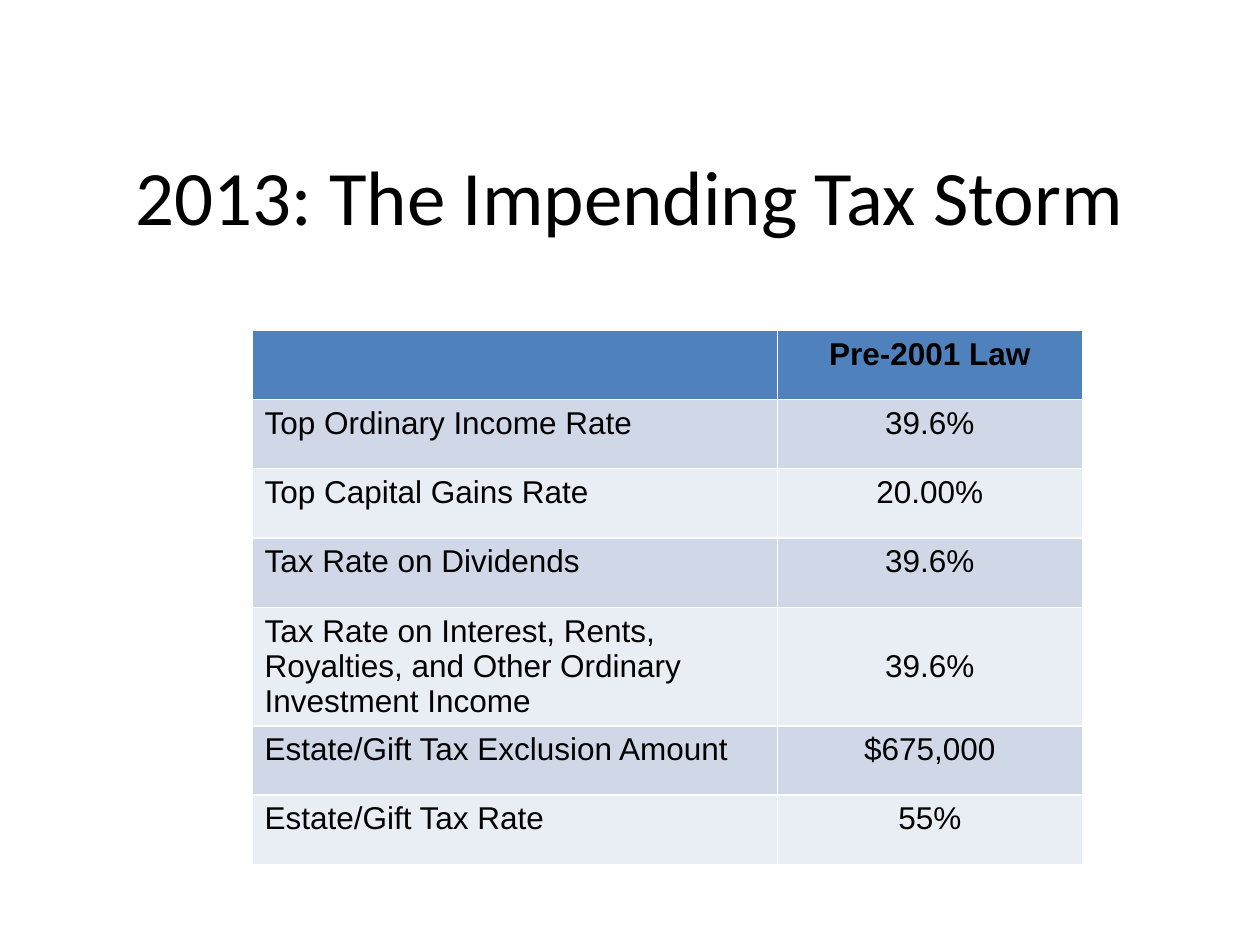
from pptx import Presentation
from pptx.dml.color import RGBColor
from pptx.enum import text
from pptx.util import Inches, Pt

BLACK = RGBColor(0x00, 0x00, 0x00)
HEADER = RGBColor(0x4F, 0x81, 0xBD)
BANDS = (RGBColor(0xD0, 0xD8, 0xE8), RGBColor(0xE9, 0xED, 0xF4))

ROWS = [
    ("", "Pre-2001 Law"),
    ("Top Ordinary Income Rate", "39.6%"),
    ("Top Capital Gains Rate", "20.00%"),
    ("Tax Rate on Dividends", "39.6%"),
    ("Tax Rate on Interest, Rents, Royalties, and Other Ordinary "
     "Investment Income", "39.6%"),
    ("Estate/Gift Tax Exclusion Amount", "$675,000"),
    ("Estate/Gift Tax Rate", "55%"),
]
COLUMN_WIDTHS = (4.17, 2.42)
ROW_HEIGHT = 0.55
TALL_ROW = 4


def format_font(font, **values):
    for name, value in values.items():
        setattr(font, name, value)
    font.color.rgb = BLACK


def add_title(s, title):
    sp = s.shapes.title
    place = dict(left=0.5, top=0.92, width=9, height=1.25)
    for name, value in place.items():
        setattr(sp, name, Inches(value))
    tf = sp.text_frame
    tf.text = title
    tf.vertical_anchor = text.MSO_ANCHOR.MIDDLE
    p = tf.paragraphs[0]
    p.alignment = text.PP_ALIGN.CENTER
    format_font(p.runs[0].font, name="Calibri", size=Pt(44))


def fill_cell(cell, content, color, bold, centered):
    cell.fill.solid()
    cell.fill.fore_color.rgb = color
    p = cell.text_frame.paragraphs[0]
    p.alignment = text.PP_ALIGN.CENTER if centered else text.PP_ALIGN.LEFT
    if content:
        r = p.add_run()
        r.text = content
        format_font(r.font, name="Arial", size=Pt(18), bold=bold)


def add_tax_table(s):
    table = s.shapes.add_table(
        len(ROWS), len(COLUMN_WIDTHS), Inches(2), Inches(2.62),
        Inches(sum(COLUMN_WIDTHS)), Inches(ROW_HEIGHT * len(ROWS))).table
    for column, width in zip(table.columns, COLUMN_WIDTHS):
        column.width = Inches(width)
    for i, row in enumerate(ROWS):
        table.rows[i].height = Inches(ROW_HEIGHT)
        color = BANDS[(i - 1) % 2] if i else HEADER
        for j, content in enumerate(row):
            fill_cell(table.cell(i, j), content, color, i == 0, j == 1)
    table.cell(TALL_ROW, 1).vertical_anchor = text.MSO_ANCHOR.MIDDLE


def main():
    prs = Presentation()
    prs.slide_width, prs.slide_height = Inches(10), Inches(7.5)
    s = prs.slides.add_slide(prs.slide_layouts[5])
    add_title(s, "2013: The Impending Tax Storm")
    add_tax_table(s)
    prs.save("out.pptx")


if __name__ == "__main__":
    main()
